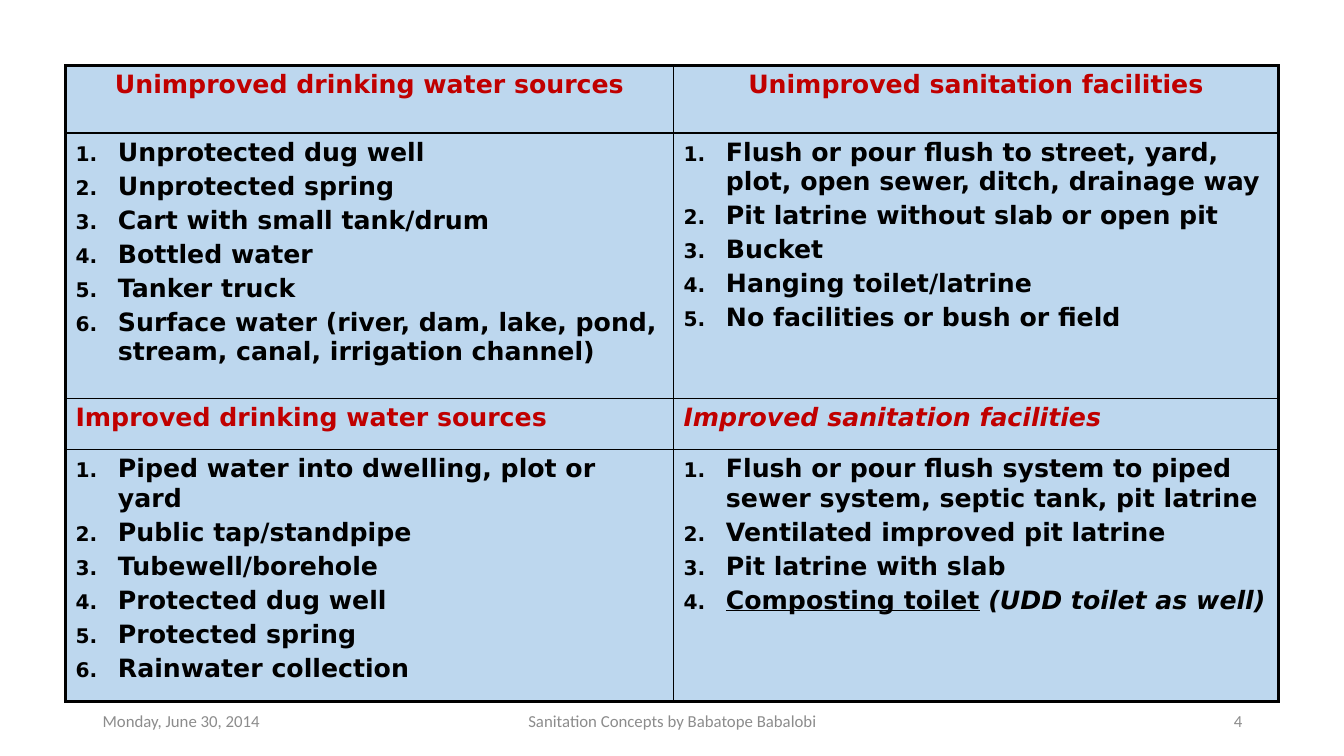
from dataclasses import dataclass

from lxml import etree
from pptx import Presentation
from pptx import util as u
from pptx.dml.color import RGBColor
from pptx.enum import text
from pptx.oxml.ns import qn

SCALE = 9144  # EMU in one px: 100 px to the inch
LEFT, MID, RIGHT = text.PP_ALIGN.LEFT, text.PP_ALIGN.CENTER, text.PP_ALIGN.RIGHT


@dataclass(frozen=True)
class Theme:
    body: str = "DejaVu Sans"
    foot: str = "Calibri"
    ink: str = "000000"
    head: str = "C00000"
    grey: str = "8C8C8C"
    cell: str = "BDD7EE"
    size: int = 18
    small: int = 12
    gap: float = 3.4
    thin: float = 1
    thick: float = 2.25
    indent: int = 42


T = Theme()

# Column widths, row heights and the text of each row
COLS = [603, 600]
ROWS = [67, 263, 51, 250]
BAD = ["Unimproved drinking water sources", "Unimproved sanitation facilities"]
GOOD = ["Improved drinking water sources", "Improved sanitation facilities"]
BAD_LISTS = [
    ["Unprotected dug well", "Unprotected spring", "Cart with small tank/drum",
     "Bottled water", "Tanker truck",
     "Surface water (river, dam, lake, pond, stream, canal, irrigation channel)"],
    ["Flush or pour flush to street, yard, plot, open sewer, ditch, drainage way",
     "Pit latrine without slab or open pit", "Bucket", "Hanging toilet/latrine",
     "No facilities or bush or field"],
]
GOOD_LISTS = [
    ["Piped water into dwelling, plot or yard", "Public tap/standpipe",
     "Tubewell/borehole", "Protected dug well", "Protected spring",
     "Rainwater collection"],
    ["Flush or pour flush system to piped sewer system, septic tank, pit latrine",
     "Ventilated improved pit latrine", "Pit latrine with slab",
     [("Composting toilet", {"underline": True}), (" ", {}),
      ("(UDD toilet as well)", {"italic": True})]],
]


def px(n):
    return u.Emu(n * SCALE)


def add_run(para, words, color, **form):
    run = para.add_run()
    run.text = words
    base = {"name": T.body, "size": u.Pt(T.size), "bold": True}
    for key, val in (base | form).items():
        setattr(run.font, key, val)
    run.font.color.rgb = RGBColor.from_string(color)


def add_foot(slide, left, width, words, align):
    box = slide.shapes.add_textbox(px(left), px(695), px(width), px(40))
    frame = box.text_frame
    frame.word_wrap = True
    frame.vertical_anchor = text.MSO_ANCHOR.MIDDLE
    para = frame.paragraphs[0]
    para.alignment = align
    add_run(para, words, T.grey, name=T.foot, size=u.Pt(T.small), bold=False)


def set_edges(cell, row, col):
    outer = {"lnL": col == 0, "lnR": col == len(COLS) - 1,
             "lnT": row == 0, "lnB": row == len(ROWS) - 1}
    props = cell._tc.get_or_add_tcPr()
    for spot, (tag, edge) in enumerate(outer.items()):
        line = etree.Element(qn("a:" + tag))
        line.set("w", str(u.Pt(T.thick if edge else T.thin)))
        fill = etree.SubElement(line, qn("a:solidFill"))
        etree.SubElement(fill, qn("a:srgbClr")).set("val", T.ink)
        props.insert(spot, line)


def fill_head(cell, words, align, italic):
    para = cell.text_frame.paragraphs[0]
    para.alignment = align
    para.space_before = u.Pt(T.gap)
    add_run(para, words, T.head, italic=italic)


def fill_list(cell, items):
    frame = cell.text_frame
    for n, item in enumerate(items):
        para = frame.add_paragraph() if n else frame.paragraphs[0]
        para.space_before = u.Pt(T.gap)
        # Hanging number at 80% of the text size
        props = para._p.get_or_add_pPr()
        props.set("marL", str(px(T.indent)))
        props.set("indent", str(px(-T.indent)))
        etree.SubElement(props, qn("a:buSzPct")).set("val", "80000")
        etree.SubElement(props, qn("a:buFont")).set("typeface", T.body)
        etree.SubElement(props, qn("a:buAutoNum")).set("type", "arabicPeriod")
        parts = [(item, {})] if isinstance(item, str) else item
        for words, form in parts:
            add_run(para, words, T.ink, **form)


def add_grid(slide):
    shape = slide.shapes.add_table(len(ROWS), len(COLS), px(65), px(65),
                                   px(sum(COLS)), px(sum(ROWS)))
    grid = shape.table
    grid.first_row = grid.horz_banding = False
    for col, wide in zip(grid.columns, COLS):
        col.width = px(wide)
    for row, high in zip(grid.rows, ROWS):
        row.height = px(high)
    for r in range(len(ROWS)):
        for c in range(len(COLS)):
            cell = grid.cell(r, c)
            cell.fill.solid()
            cell.fill.fore_color.rgb = RGBColor.from_string(T.cell)
            set_edges(cell, r, c)
    return grid


def main():
    deck = Presentation()
    deck.slide_width, deck.slide_height = px(1333), px(750)
    slide = deck.slides.add_slide(deck.slide_layouts[6])

    # Footer line
    add_foot(slide, 92, 300, "Monday, June 30, 2014", LEFT)
    add_foot(slide, 442, 450, "Sanitation Concepts by Babatope Babalobi", MID)
    add_foot(slide, 942, 300, "4", RIGHT)

    # Table of water sources and sanitation facilities
    grid = add_grid(slide)
    for c in range(len(COLS)):
        fill_head(grid.cell(0, c), BAD[c], MID, False)
        fill_list(grid.cell(1, c), BAD_LISTS[c])
        fill_head(grid.cell(2, c), GOOD[c], LEFT, c == 1)
        fill_list(grid.cell(3, c), GOOD_LISTS[c])

    deck.save("out.pptx")


if __name__ == "__main__":
    main()
